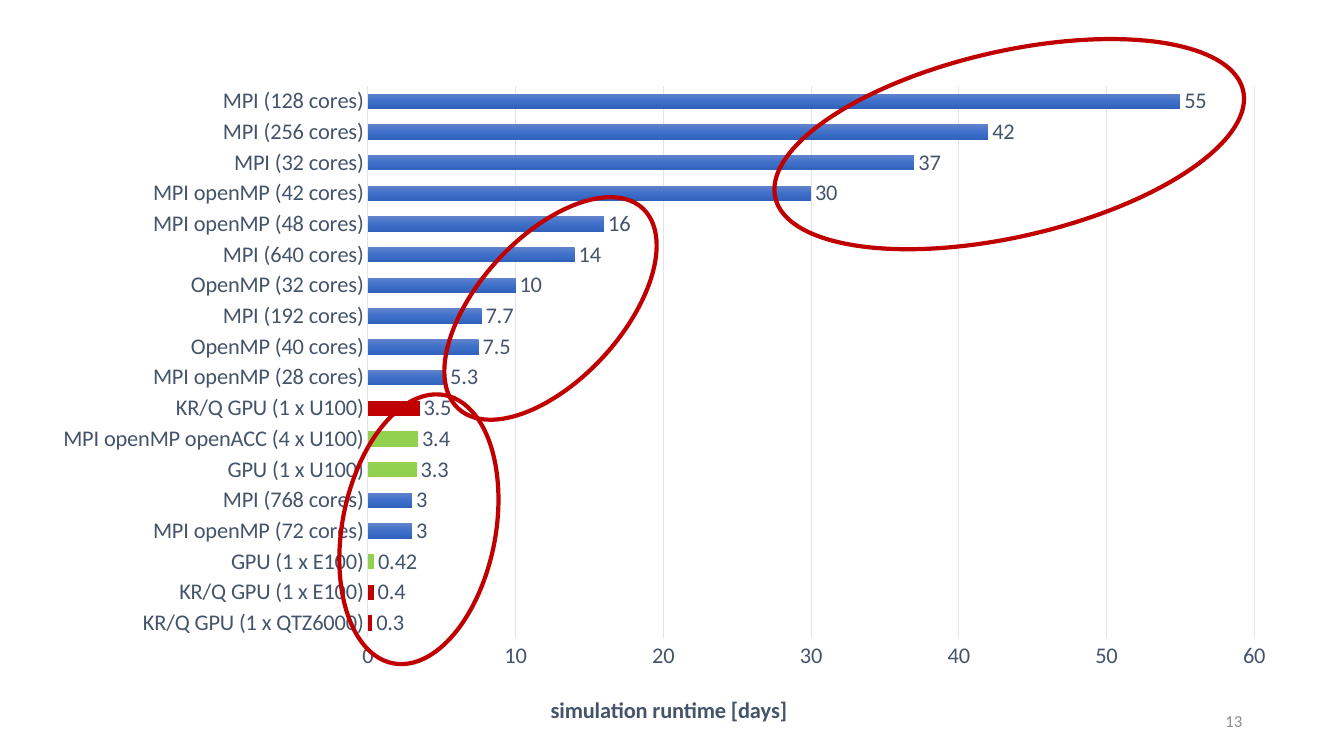
import copy

import lxml.etree
import pptx
import pptx.chart.data
import pptx.dml.color
import pptx.enum.chart
import pptx.enum.shapes
import pptx.enum.text
import pptx.oxml.ns
import pptx.util
from pptx.util import Inches

RGBColor = pptx.dml.color.RGBColor
SLATE = RGBColor(0x44, 0x54, 0x6A)
GRID = RGBColor(0xE0, 0xE5, 0xEB)
GRAY = RGBColor(0x8C, 0x8C, 0x8C)
RED = RGBColor(0xC0, 0x00, 0x00)
GREEN = RGBColor(0x92, 0xD0, 0x50)
BLUES = [RGBColor(0x61, 0x83, 0xCB), RGBColor(0x3E, 0x70, 0xCA), RGBColor(0x30, 0x62, 0xBB)]
FONT = "Calibri"

# Label, days, and the bar colour where it is not blue; bottom bar first
RUNTIMES = [
    ("KR/Q GPU (1 x QTZ6000)", 0.3, RED),
    ("KR/Q GPU (1 x E100)", 0.4, RED),
    ("GPU (1 x E100)", 0.42, GREEN),
    ("MPI openMP (72 cores)", 3, None),
    ("MPI (768 cores)", 3, None),
    ("GPU (1 x U100)", 3.3, GREEN),
    ("MPI openMP openACC (4 x U100)", 3.4, GREEN),
    ("KR/Q GPU (1 x U100)", 3.5, RED),
    ("MPI openMP (28 cores)", 5.3, None),
    ("OpenMP (40 cores)", 7.5, None),
    ("MPI (192 cores)", 7.7, None),
    ("OpenMP (32 cores)", 10, None),
    ("MPI (640 cores)", 14, None),
    ("MPI openMP (48 cores)", 16, None),
    ("MPI openMP (42 cores)", 30, None),
    ("MPI (32 cores)", 37, None),
    ("MPI (256 cores)", 42, None),
    ("MPI (128 cores)", 55, None),
]

# Left, top, width, height and rotation of each group outline
GROUPS = [
    (4.11, 2.35, 2.7, 1.42, 312.6),
    (2.8, 4.49, 2.71, 1.52, 280.9),
    (7.63, 0.51, 4.76, 1.84, 347.1),
]


def format_font(font, size=16, color=SLATE, bold=False):
    font.name = FONT
    font.size = pptx.util.Pt(size)
    font.bold = bold
    font.color.rgb = color


def write_text(text_frame, text, align=None, **font_format):
    paragraph = text_frame.paragraphs[0]
    paragraph.alignment = align
    run = paragraph.add_run()
    run.text = text
    format_font(run.font, **font_format)


def set_layout(parent, index, **fractions):
    """Place a chart part by fractions of the chart's size."""
    qn = pptx.oxml.ns.qn
    for old_layout in parent.findall(qn("c:layout")):
        parent.remove(old_layout)
    layout = lxml.etree.Element(qn("c:layout"))
    manual = lxml.etree.SubElement(layout, qn("c:manualLayout"))
    if "w" in fractions:
        lxml.etree.SubElement(manual, qn("c:layoutTarget")).set("val", "inner")
    for side in ("x", "y"):
        lxml.etree.SubElement(manual, qn(f"c:{side}Mode")).set("val", "edge")
    for name, value in fractions.items():
        lxml.etree.SubElement(manual, qn(f"c:{name}")).set("val", str(value))
    parent.insert(index, layout)


def style_axes(chart):
    tick_mark = pptx.enum.chart.XL_TICK_MARK
    for axis in (chart.category_axis, chart.value_axis):
        axis.major_tick_mark = axis.minor_tick_mark = tick_mark.NONE
        format_font(axis.tick_labels.font)

    category_axis, value_axis = chart.category_axis, chart.value_axis
    category_axis.has_major_gridlines = False
    value_axis.has_major_gridlines = True
    for line in (category_axis.format.line, value_axis.major_gridlines.format.line):
        line.color.rgb = GRID
        line.width = pptx.util.Pt(0.75)
    value_axis.format.line.fill.background()
    value_axis.minimum_scale, value_axis.maximum_scale = 0, 60
    value_axis.major_unit = 10

    title = value_axis.axis_title
    write_text(title.text_frame, "simulation runtime [days]", bold=True)
    set_layout(title._element, 1, x=0.405, y=0.925)


def style_bars(plot):
    plot.gap_width = 100
    plot.vary_by_categories = False
    series = plot.series[0]
    series.invert_if_negative = False

    # Blue gradient with a middle stop
    fill = series.format.fill
    fill.gradient()
    fill.gradient_angle = 270
    first_stop = fill.gradient_stops[0]._gs
    first_stop.addnext(copy.deepcopy(first_stop))
    for stop, color, position in zip(fill.gradient_stops, BLUES, (0, 0.5, 1)):
        stop.color.rgb = color
        stop.position = position

    for index, (_, _, color) in enumerate(RUNTIMES):
        if color is not None:
            point_fill = series.points[index].format.fill
            point_fill.solid()
            point_fill.fore_color.rgb = color

    labels = series.data_labels
    labels.show_value = True
    labels.number_format = "General"
    labels.number_format_is_linked = False
    labels.position = pptx.enum.chart.XL_LABEL_POSITION.OUTSIDE_END
    format_font(labels.font)


def add_runtime_chart(slide, left, top, width, height):
    data = pptx.chart.data.CategoryChartData()
    data.categories = [label for label, _, _ in RUNTIMES]
    data.add_series("Series 1", [days for _, days, _ in RUNTIMES])
    chart = slide.shapes.add_chart(
        pptx.enum.chart.XL_CHART_TYPE.BAR_CLUSTERED,
        Inches(left), Inches(top), Inches(width), Inches(height), data).chart
    chart.has_legend = False
    chart.has_title = False
    format_font(chart.font)
    style_axes(chart)
    style_bars(chart.plots[0])
    set_layout(chart._chartSpace.chart.plotArea, 0, x=0.262, y=0.02, w=0.709, h=0.827)


def add_group_outline(slide, left, top, width, height, rotation):
    ellipse = slide.shapes.add_shape(
        pptx.enum.shapes.MSO_SHAPE.OVAL,
        Inches(left), Inches(top), Inches(width), Inches(height))
    ellipse.rotation = rotation
    ellipse.shadow.inherit = False
    ellipse.fill.background()
    ellipse.line.color.rgb = RED
    ellipse.line.width = pptx.util.Pt(3)


def add_page_number(slide, left, top, width, height):
    text_frame = slide.shapes.add_textbox(
        Inches(left), Inches(top), Inches(width), Inches(height)).text_frame
    text_frame.word_wrap = True
    text_frame.vertical_anchor = pptx.enum.text.MSO_ANCHOR.MIDDLE
    write_text(text_frame, "13", align=pptx.enum.text.PP_ALIGN.RIGHT, size=12, color=GRAY)


def main():
    presentation = pptx.Presentation()
    presentation.slide_width = Inches(13.33)
    presentation.slide_height = Inches(7.5)
    slide = presentation.slides.add_slide(presentation.slide_layouts[6])
    add_page_number(slide, 9.42, 6.95, 3, 0.4)
    add_runtime_chart(slide, 0.4, 0.72, 12.4, 6.63)
    for group in GROUPS:
        add_group_outline(slide, *group)
    presentation.save("out.pptx")


if __name__ == "__main__":
    main()
